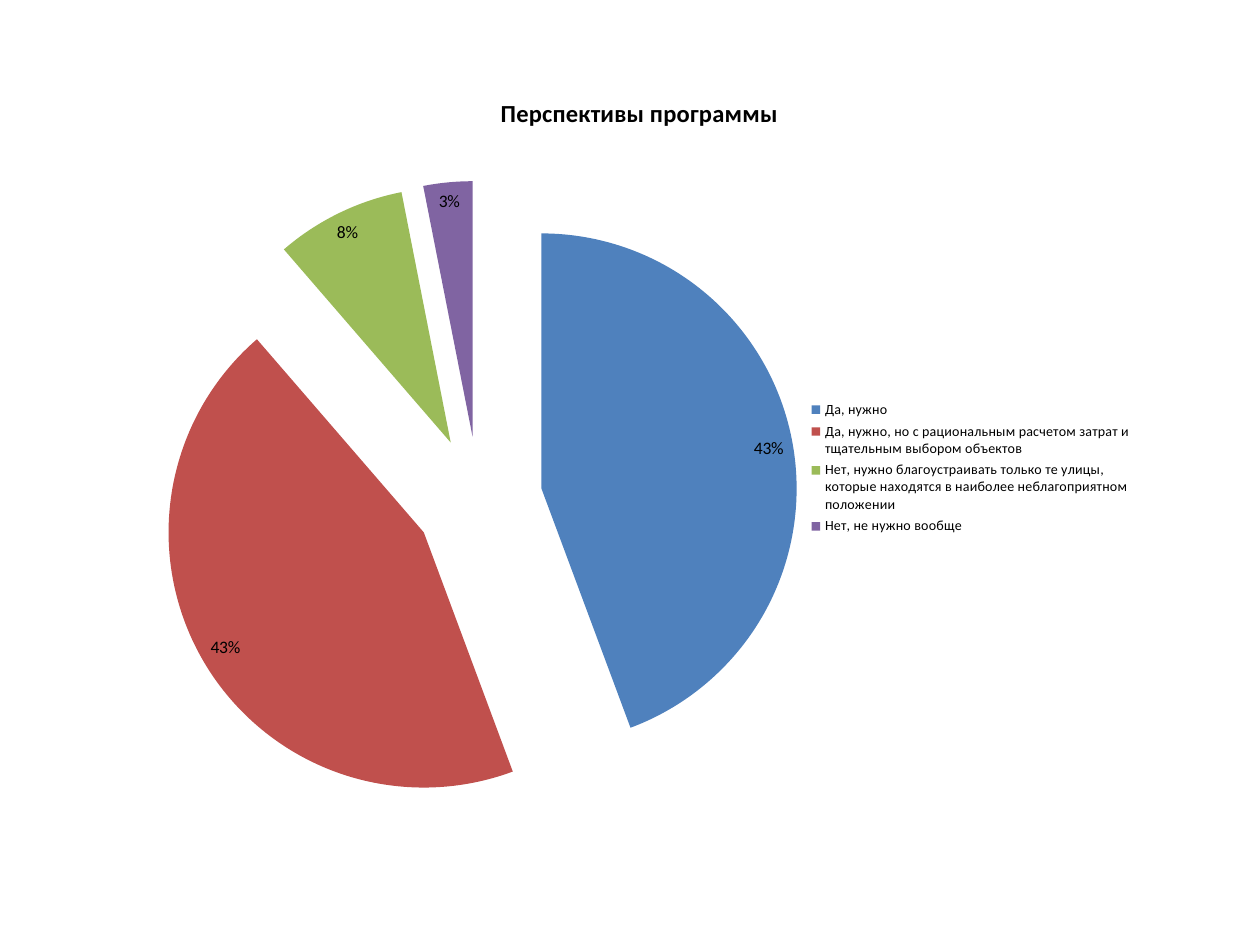
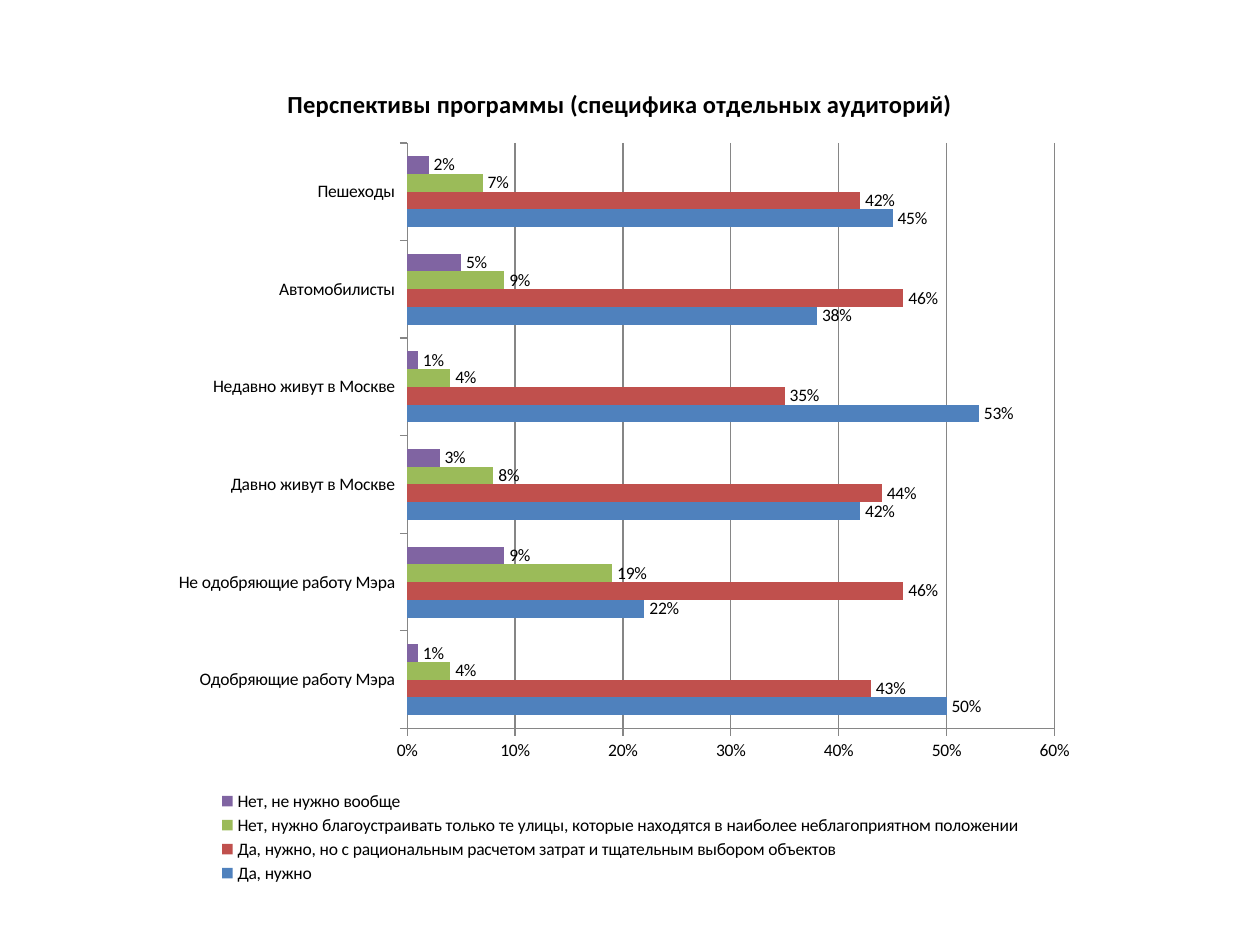
from dataclasses import dataclass
from lxml.etree import SubElement
from pptx import Presentation
from pptx.chart.chart import Chart
from pptx.chart.data import CategoryChartData
from pptx.dml.color import RGBColor
from pptx.enum.chart import XL_CHART_TYPE, XL_LABEL_POSITION, XL_LEGEND_POSITION, XL_TICK_MARK
from pptx.oxml.ns import qn
from pptx.util import Inches, Pt

FONT = "Calibri"
PERCENT = "###0%"
COLORS = {
    "text": "000000",
    "axis": "868686",
    "yes": "4F81BD",
    "yes_rational": "C0504D",
    "only_worst": "9BBB59",
    "no": "8064A2",
}
ANSWERS = {
    "yes": "Да, нужно",
    "yes_rational": "Да, нужно, но с рациональным расчетом затрат и тщательным выбором объектов",
    "only_worst": "Нет, нужно благоустраивать только те улицы, "
                  "которые находятся в наиболее неблагоприятном положении",
    "no": "Нет, не нужно вообще",
}
OVERALL = [0.43, 0.43, 0.08, 0.03]
AUDIENCES = {
    "Одобряющие работу Мэра": [0.50, 0.43, 0.04, 0.01],
    "Не одобряющие работу Мэра": [0.22, 0.46, 0.19, 0.09],
    "Давно живут в Москве": [0.42, 0.44, 0.08, 0.03],
    "Недавно живут в Москве": [0.53, 0.35, 0.04, 0.01],
    "Автомобилисты": [0.38, 0.46, 0.09, 0.05],
    "Пешеходы": [0.45, 0.42, 0.07, 0.02],
}


@dataclass(frozen=True)
class Area:
    x: float
    y: float
    w: float
    h: float


@dataclass(frozen=True)
class ChartSlide:
    title: str
    kind: XL_CHART_TYPE
    frame: Area
    plot_area: Area
    legend_area: Area
    legend_side: XL_LEGEND_POSITION
    legend_size: int
    label_position: XL_LABEL_POSITION


PROSPECTS = ChartSlide(
    "Перспективы программы", XL_CHART_TYPE.PIE,
    Area(1.09, 0.55, 7.97, 6.33), Area(0.02, 0.14, 0.64, 0.8),
    Area(0.67, 0.41, 0.32, 0.18), XL_LEGEND_POSITION.RIGHT, 8,
    XL_LABEL_POSITION.BEST_FIT,
)
BY_AUDIENCE = ChartSlide(
    "Перспективы программы (специфика отдельных аудиторий)", XL_CHART_TYPE.BAR_CLUSTERED,
    Area(1.25, 0.47, 7.34, 6.64), Area(0.27, 0.1, 0.7, 0.7),
    Area(0.06, 0.87, 0.88, 0.12), XL_LEGEND_POSITION.BOTTOM, 10,
    XL_LABEL_POSITION.OUTSIDE_END,
)


def color(name: str) -> RGBColor:
    return RGBColor.from_string(COLORS[name])


def style_font(font, size: int, bold: bool = False) -> None:
    font.name = FONT
    font.size = Pt(size)
    font.bold = bold
    font.color.rgb = color("text")


def paint(part, name: str) -> None:
    part.format.fill.solid()
    part.format.fill.fore_color.rgb = color(name)


def place(parent, index: int, area: Area, inner: bool = False) -> None:
    for old in parent.findall(qn("c:layout")):
        parent.remove(old)
    layout = SubElement(parent, qn("c:layout"))
    manual = SubElement(layout, qn("c:manualLayout"))
    settings = {"layoutTarget": "inner"} if inner else {}
    settings |= {"xMode": "edge", "yMode": "edge",
                 "x": area.x, "y": area.y, "w": area.w, "h": area.h}
    for tag, value in settings.items():
        SubElement(manual, qn(f"c:{tag}")).set("val", str(value))
    parent.insert(index, layout)


def add_chart_slide(prs, design: ChartSlide, data: CategoryChartData) -> Chart:
    slide = prs.slides.add_slide(prs.slide_layouts[6])
    frame = design.frame
    chart = slide.shapes.add_chart(
        design.kind, Inches(frame.x), Inches(frame.y), Inches(frame.w), Inches(frame.h), data
    ).chart
    style_font(chart.font, 10)

    chart.has_title = True
    heading = chart.chart_title.text_frame
    heading.text = design.title
    style_font(heading.paragraphs[0].runs[0].font, 14, bold=True)

    chart.has_legend = True
    legend = chart.legend
    legend.position = design.legend_side
    legend.include_in_layout = False
    style_font(legend.font, design.legend_size)

    plot = chart.plots[0]
    plot.has_data_labels = True
    labels = plot.data_labels
    labels.show_value = True
    labels.show_percentage = False
    labels.number_format = PERCENT
    labels.number_format_is_linked = False
    labels.position = design.label_position
    style_font(labels.font, 10)

    place(plot._element.getparent(), 0, design.plot_area, inner=True)
    place(legend._element, 1, design.legend_area)
    return chart


def add_prospects(prs) -> None:
    data = CategoryChartData(number_format=PERCENT)
    data.categories = list(ANSWERS.values())
    data.add_series("Series 1", OVERALL)
    chart = add_chart_slide(prs, PROSPECTS, data)
    chart.plots[0].vary_by_categories = True
    shares = chart.plots[0].series[0]
    for index, answer in enumerate(ANSWERS):
        paint(shares.points[index], answer)
    explosion = SubElement(shares._element, qn("c:explosion"))
    explosion.set("val", "25")
    shares._element.find(qn("c:tx")).addnext(explosion)


def add_audiences(prs) -> None:
    data = CategoryChartData(number_format=PERCENT)
    data.categories = list(AUDIENCES)
    for answer, values in zip(ANSWERS.values(), zip(*AUDIENCES.values())):
        data.add_series(answer, values)
    chart = add_chart_slide(prs, BY_AUDIENCE, data)
    plot = chart.plots[0]
    plot.vary_by_categories = False
    plot.gap_width = 150
    for series, answer in zip(plot.series, ANSWERS):
        paint(series, answer)

    shares = chart.value_axis
    shares.minimum_scale, shares.maximum_scale, shares.major_unit = 0, 0.6, 0.1
    shares.has_major_gridlines = True
    shares.tick_labels.number_format = PERCENT
    shares.tick_labels.number_format_is_linked = False
    for axis in (shares, chart.category_axis):
        axis.major_tick_mark = XL_TICK_MARK.OUTSIDE
        style_font(axis.tick_labels.font, 10)
    for ruled in (shares, chart.category_axis, shares.major_gridlines):
        ruled.format.line.color.rgb = color("axis")
        ruled.format.line.width = Pt(0.75)


def main() -> None:
    prs = Presentation()
    prs.slide_width, prs.slide_height = Inches(10), Inches(7.5)
    add_prospects(prs)
    add_audiences(prs)
    prs.save("out.pptx")


if __name__ == "__main__":
    main()
